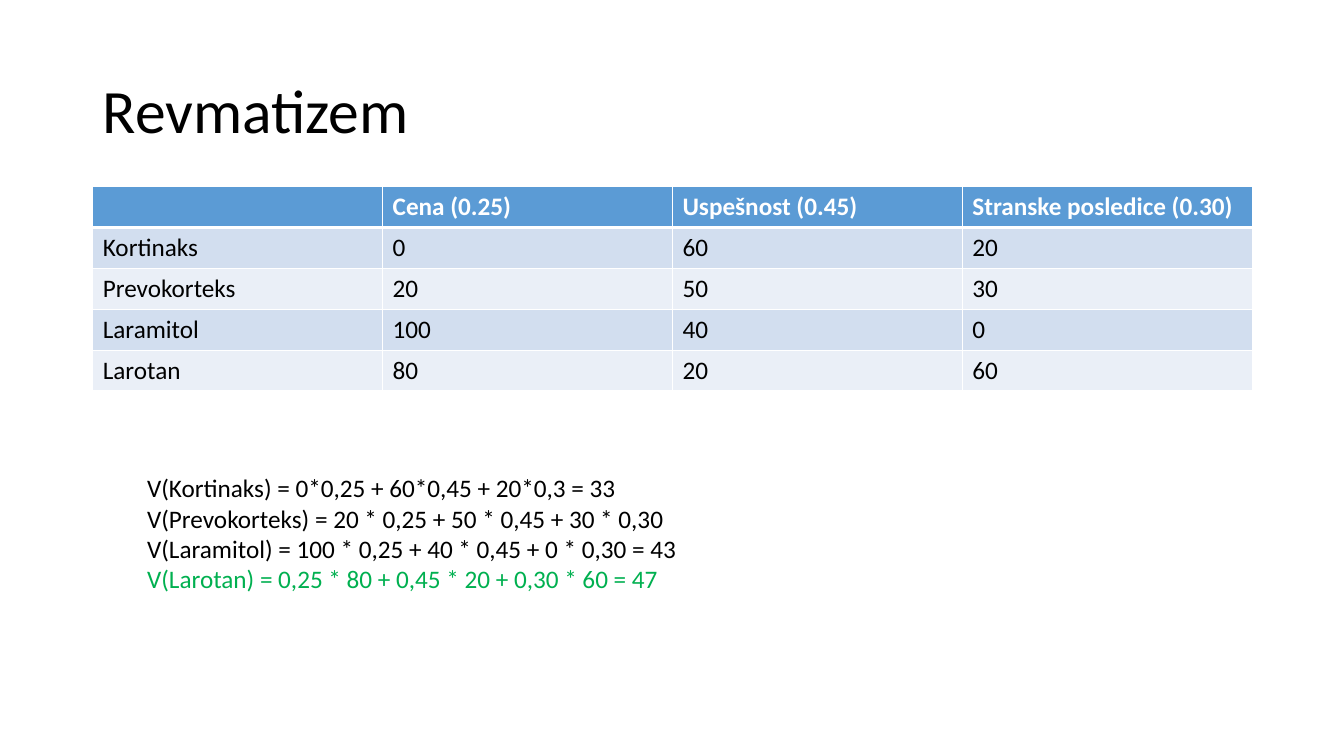
from dataclasses import dataclass

from lxml import etree
from pptx import Presentation, util as u
from pptx.dml.color import RGBColor
from pptx.enum import text
from pptx.oxml import ns

EMU_PER_PX = 9144  # 100 px to the inch
FONT = "Calibri"
BLACK, WHITE, GREEN = "000000", "FFFFFF", "00B050"
HEADER_FILL, BAND_FILLS = "5B9BD5", ("D2DEEF", "EAEFF7")


@dataclass
class Line:
    words: str
    color: str = BLACK
    size: int = 18
    bold: bool = False
    spacing: float = 1.0


@dataclass
class TextBlock:
    left: int
    top: int
    width: int
    height: int
    lines: list[Line]
    anchor: text.MSO_ANCHOR = text.MSO_ANCHOR.TOP
    wrap: bool = True
    grow: bool = False


TITLE = TextBlock(92, 40, 1150, 145, [Line("Revmatizem", size=44, spacing=0.9)],
                  anchor=text.MSO_ANCHOR.MIDDLE)
SCORES = TextBlock(136, 464, 552, 131, [
    Line("V(Kortinaks) = 0*0,25 + 60*0,45 + 20*0,3 = 33"),
    Line("V(Prevokorteks) = 20 * 0,25 + 50 * 0,45 + 30 * 0,30"),
    Line("V(Laramitol) = 100 * 0,25 + 40 * 0,45 + 0 * 0,30 = 43"),
    Line("V(Larotan) = 0,25 * 80 + 0,45 * 20 + 0,30 * 60 = 47", GREEN),
], wrap=False, grow=True)
DRUGS = [
    ("", "Cena (0.25)", "Uspešnost (0.45)", "Stranske posledice (0.30)"),
    ("Kortinaks", "0", "60", "20"),
    ("Prevokorteks", "20", "50", "30"),
    ("Laramitol", "100", "40", "0"),
    ("Larotan", "80", "20", "60"),
]


def px(length: int) -> u.Emu:
    return u.Emu(length * EMU_PER_PX)


def rgb(color: str) -> RGBColor:
    return RGBColor.from_string(color)


def write_line(para, line: Line) -> None:
    para.text = line.words
    para.line_spacing = line.spacing
    font = para.font
    font.name, font.size, font.bold = FONT, u.Pt(line.size), line.bold
    font.color.rgb = rgb(line.color)


def add_text(page, block: TextBlock) -> None:
    box = page.shapes.add_textbox(px(block.left), px(block.top),
                                  px(block.width), px(block.height))
    frame = box.text_frame
    frame.word_wrap = block.wrap
    frame.vertical_anchor = block.anchor
    if block.grow:
        frame.auto_size = text.MSO_AUTO_SIZE.SHAPE_TO_FIT_TEXT
    for i, line in enumerate(block.lines):
        write_line(frame.add_paragraph() if i else frame.paragraphs[0], line)


def set_borders(cell, top: int, bottom: int) -> None:
    props = cell._tc.get_or_add_tcPr()
    for side, points in (("L", 1), ("R", 1), ("T", top), ("B", bottom)):
        edge = etree.SubElement(props, ns.qn(f"a:ln{side}"), w=str(u.Pt(points)))
        fill = etree.SubElement(edge, ns.qn("a:solidFill"))
        etree.SubElement(fill, ns.qn("a:srgbClr"), val=WHITE)


def add_drug_table(page, left: int, top: int, width: int, height: int) -> None:
    frame = page.shapes.add_table(len(DRUGS), len(DRUGS[0]), px(left), px(top),
                                  px(width), px(height))
    for r, values in enumerate(DRUGS):
        header = r == 0
        for c, value in enumerate(values):
            cell = frame.table.cell(r, c)
            # The rule under the header is thicker than the others
            set_borders(cell, top=3 if r == 1 else 1, bottom=3 if header else 1)
            cell.fill.solid()
            cell.fill.fore_color.rgb = rgb(HEADER_FILL if header else BAND_FILLS[(r - 1) % 2])
            write_line(cell.text_frame.paragraphs[0],
                       Line(value, WHITE if header else BLACK, bold=header))


def main() -> None:
    deck = Presentation()
    deck.slide_width, deck.slide_height = px(1333), px(750)
    page = deck.slides.add_slide(deck.slide_layouts[6])

    # Title, comparison table, weighted scores
    add_text(page, TITLE)
    add_drug_table(page, 92, 185, 1150, 203)
    add_text(page, SCORES)

    deck.save("out.pptx")


if __name__ == "__main__":
    main()
